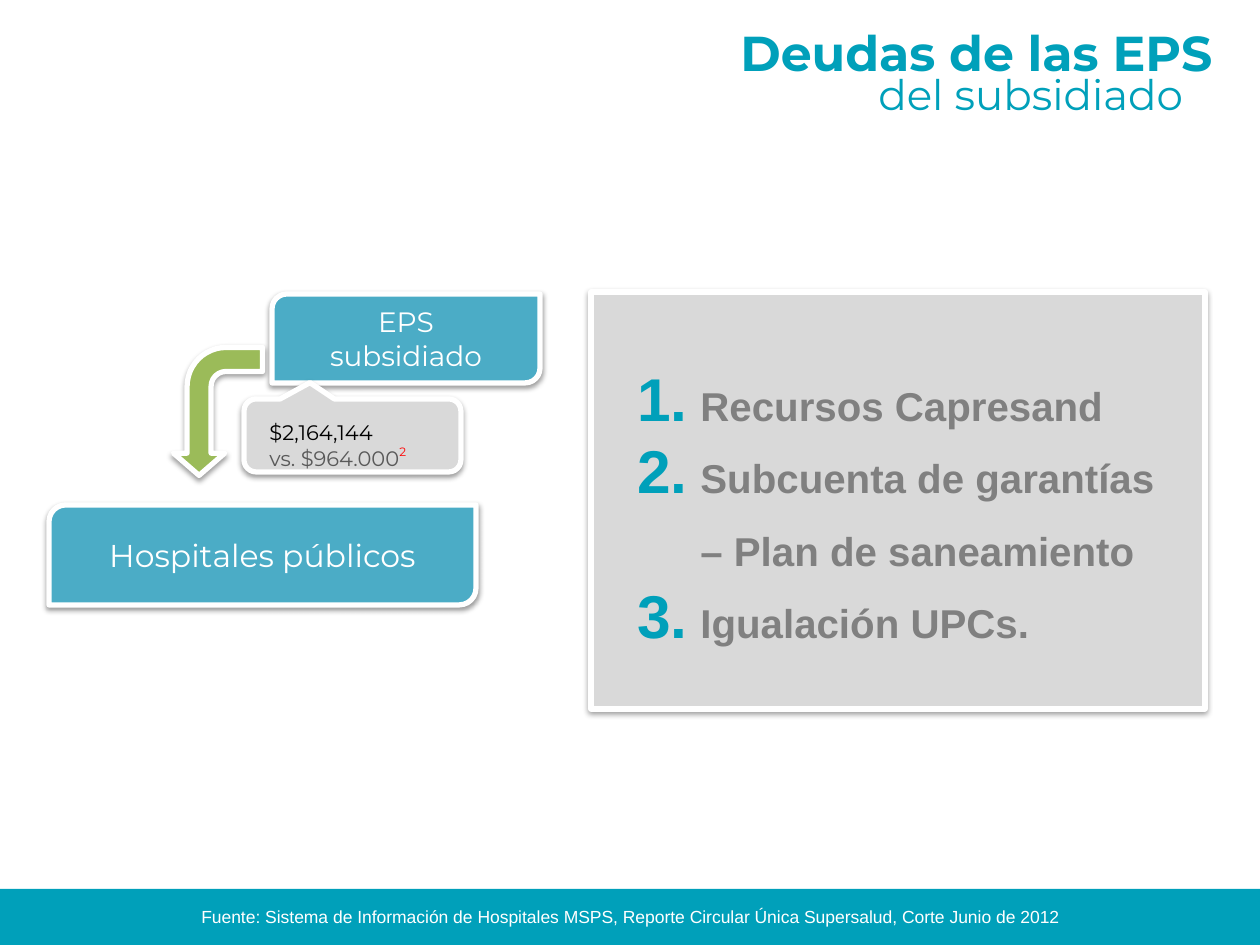
from lxml.etree import SubElement
from pptx import Presentation
from pptx.dml.color import RGBColor
from pptx.enum.shapes import MSO_SHAPE as Shape
from pptx.enum.text import MSO_ANCHOR as Anchor, PP_ALIGN as Align
from pptx.oxml import parse_xml
from pptx.oxml.ns import nsdecls, qn
from pptx.util import Emu, Pt

TEAL = RGBColor(0x00, 0xA0, 0xBA)
BLUE = RGBColor(0x4B, 0xAC, 0xC6)
GREEN = RGBColor(0x9B, 0xBB, 0x59)
PANEL = RGBColor(0xD9, 0xD9, 0xD9)
GRAY = RGBColor(0x80, 0x80, 0x80)
DARK = RGBColor(0x59, 0x59, 0x59)
RED = RGBColor(0xFF, 0x00, 0x00)
BLACK = RGBColor(0x00, 0x00, 0x00)
WHITE = RGBColor(0xFF, 0xFF, 0xFF)

TITLE = "Deudas de las EPS"
SUBTITLE = "del subsidiado"
ENTITIES = [  # text, box in px, text size
    ("EPS\vsubsidiado", (272, 294, 268, 89), 16),
    ("Hospitales públicos", (49, 505, 427, 100), 18),
]
DEBT = "$2,164,144"
COMPARISON, NOTE = "vs. $964.000", "2"
MEASURES = [
    "Recursos Capresand",
    "Subcuenta de garantías – Plan de saneamiento",
    "Igualación UPCs.",
]
SOURCE = ("Fuente: Sistema de Información de Hospitales MSPS, "
          "Reporte Circular Única Supersalud, Corte Junio de 2012")


def px(n):
    return Emu(round(n * 914400 / 126))


def style(part, size, color, face="Montserrat", bold=False):
    """Format a paragraph or a run."""
    part.font.size = Pt(size)
    part.font.name = face
    part.font.bold = bold
    part.font.color.rgb = color


def add_block(slide, kind, box, fill, adjustments=()):
    """Add a filled shape with a white outline and a soft shadow below."""
    block = slide.shapes.add_shape(kind, *map(px, box))
    for i, value in enumerate(adjustments):
        block.adjustments[i] = value
    block.fill.solid()
    block.fill.fore_color.rgb = fill
    block.line.color.rgb = WHITE
    block.line.width = Pt(3)
    block._element.spPr.append(parse_xml(
        f'<a:effectLst {nsdecls("a")}><a:outerShdw blurRad="39370" dist="20320" '
        'dir="5400000" rotWithShape="0"><a:srgbClr val="000000">'
        '<a:alpha val="38000"/></a:srgbClr></a:outerShdw></a:effectLst>'))
    return block


def add_text(slide, box, lines, wrap=True):
    frame = slide.shapes.add_textbox(*map(px, box)).text_frame
    frame.word_wrap = wrap
    frame.text = "\n".join(lines)
    return frame


def number(paragraph):
    """Give a paragraph a large teal number and a hanging indent."""
    props = paragraph._p.get_or_add_pPr()
    props.set("marL", str(px(63)))
    props.set("indent", str(-px(63)))
    color = SubElement(props, qn("a:buClr"))
    SubElement(color, qn("a:srgbClr"), val=str(TEAL))
    SubElement(props, qn("a:buSzPct"), val="150000")
    SubElement(props, qn("a:buFont"), typeface="+mj-lt")
    SubElement(props, qn("a:buAutoNum"), type="arabicPeriod")


def main():
    deck = Presentation()
    deck.slide_width, deck.slide_height = px(1260), px(945)
    slide = deck.slides.add_slide(deck.slide_layouts[5])

    footer = slide.shapes.add_shape(Shape.RECTANGLE, *map(px, (0, 889, 1260, 56)))
    footer.shadow.inherit = False
    footer.fill.solid()
    footer.fill.fore_color.rgb = TEAL
    footer.line.fill.background()

    title = slide.shapes.title
    title.left, title.top, title.width, title.height = map(px, (699, 11, 526, 82))
    title.text_frame.text = TITLE
    title.text_frame.vertical_anchor = Anchor.MIDDLE
    heading = title.text_frame.paragraphs[0]
    heading.alignment = Align.RIGHT
    style(heading.runs[0], 28, TEAL, bold=True)

    for text, box, size in ENTITIES:
        frame = add_block(slide, Shape.ROUND_2_DIAG_RECTANGLE, box, BLUE).text_frame
        frame.text = text
        frame.vertical_anchor = Anchor.MIDDLE
        label = frame.paragraphs[0]
        label.alignment = Align.CENTER
        for run in label.runs:
            style(run, size, WHITE)

    arrow = add_block(slide, Shape.BENT_ARROW, (154, 367, 128, 89), GREEN,
                      (0.27, 0.288, 0.25, 0.438))
    arrow.rotation = 270
    arrow._element.spPr.xfrm.set("flipH", "1")

    add_block(slide, Shape.ROUNDED_RECTANGULAR_CALLOUT, (244, 399, 217, 73), PANEL,
              (-0.196, -0.723, 0.167))
    debt, comparison = add_text(slide, (257, 413, 219, 63),
                                [DEBT, COMPARISON]).paragraphs
    style(debt.runs[0], 12, BLACK)
    style(comparison.runs[0], 12, DARK)
    note = comparison.add_run()
    note.text = NOTE
    style(note, 12, RED)
    note.font._element.set("baseline", "50000")

    subtitle = add_text(slide, (866, 62, 360, 63), [SUBTITLE], wrap=False)
    style(subtitle.paragraphs[0].runs[0], 24, TEAL)

    add_block(slide, Shape.RECTANGLE, (591, 292, 614, 417), PANEL)
    for measure in add_text(slide, (625, 351, 546, 300), MEASURES).paragraphs:
        measure.line_spacing = 1.5
        number(measure)
        style(measure.runs[0], 23, GRAY, "Arial", bold=True)

    source = add_text(slide, (151, 900, 958, 45), [SOURCE]).paragraphs[0]
    source.alignment = Align.CENTER
    style(source.runs[0], 10, WHITE, "Arial")

    deck.save("out.pptx")


if __name__ == "__main__":
    main()
